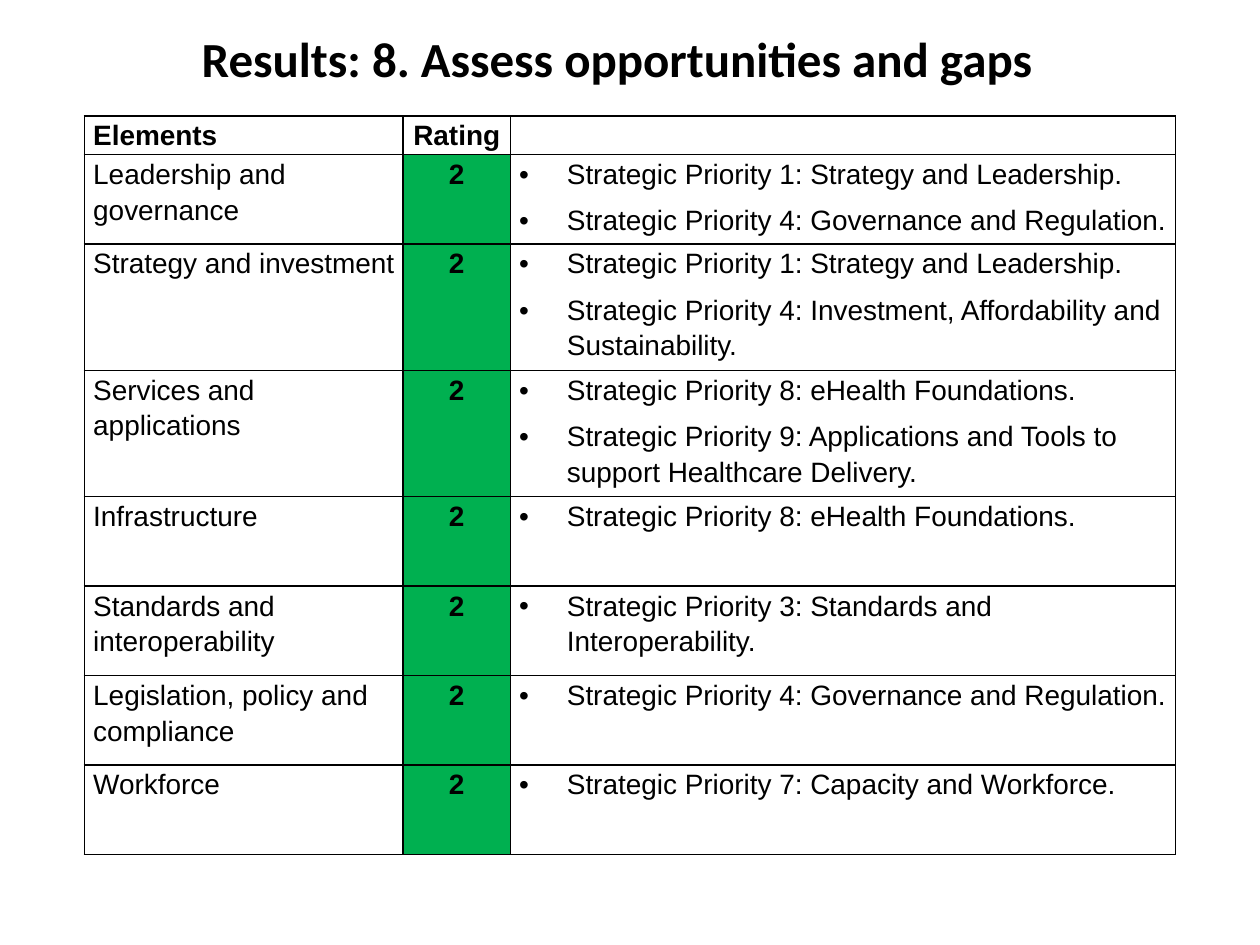
from lxml import etree
from pptx import Presentation
from pptx import util as u
from pptx.dml.color import RGBColor
from pptx.enum import text
from pptx.oxml.ns import qn

# Content
TITLE = "Results: 8. Assess opportunities and gaps "
HEADERS = ("Elements", "Rating", "")
ELEMENTS = [
    ("Leadership and governance", "2",
     ["Strategic Priority 1: Strategy and Leadership.",
      "Strategic Priority 4: Governance and Regulation."]),
    ("Strategy and investment", "2",
     ["Strategic Priority 1: Strategy and Leadership.",
      "Strategic Priority 4: Investment, Affordability and Sustainability."]),
    ("Services and applications", "2",
     ["Strategic Priority 8: eHealth Foundations.",
      "Strategic Priority 9: Applications and Tools to support Healthcare Delivery."]),
    ("Infrastructure", "2", ["Strategic Priority 8: eHealth Foundations."]),
    ("Standards and interoperability", "2",
     ["Strategic Priority 3: Standards and Interoperability."]),
    ("Legislation, policy and compliance", "2",
     ["Strategic Priority 4: Governance and Regulation."]),
    ("Workforce", "2", ["Strategic Priority 7: Capacity and Workforce."]),
]

# Layout in inches
COLUMNS = (2.53, 0.85, 5.28)
HEADER_ROW, SHORT_ROW, TALL_ROW = 0.29, 0.71, 1
TALL = {"Strategy and investment", "Services and applications"}
INDENT = 0.38
BLACK, GREEN = "000000", "00B050"


def color(value):
    return RGBColor.from_string(value)


def set_font(font, name, size, bold):
    font.name, font.size, font.bold = name, u.Pt(size), bold
    font.color.rgb = color(BLACK)


def add_bullet(paragraph):
    props = paragraph._p.get_or_add_pPr()
    props.set("marL", str(u.Inches(INDENT)))
    props.set("indent", str(-u.Inches(INDENT)))
    etree.SubElement(props, qn("a:buFont")).set("typeface", "Arial")
    etree.SubElement(props, qn("a:buChar")).set("char", "•")


def add_borders(cell):
    props = cell._tc.get_or_add_tcPr()
    for place, side in enumerate(("a:lnL", "a:lnR", "a:lnT", "a:lnB")):
        line = etree.Element(qn(side), w=str(u.Pt(1)))
        fill = etree.SubElement(line, qn("a:solidFill"))
        etree.SubElement(fill, qn("a:srgbClr")).set("val", BLACK)
        props.insert(place, line)


def fill_cell(cell, lines, bold=False, centred=False, bullets=False, fill=None):
    cell.margin_left = cell.margin_right = u.Inches(0.07)
    cell.margin_top = cell.margin_bottom = 0
    if fill:
        cell.fill.solid()
        cell.fill.fore_color.rgb = color(fill)
    else:
        cell.fill.background()
    add_borders(cell)
    frame = cell.text_frame
    for number, line in enumerate(lines):
        paragraph = frame.add_paragraph() if number else frame.paragraphs[0]
        if bullets:
            add_bullet(paragraph)
        paragraph.line_spacing = 1.15
        paragraph.space_before = u.Pt(3 if number else 0)
        paragraph.space_after = u.Pt(3)
        if centred:
            paragraph.alignment = text.PP_ALIGN.CENTER
        set_font(paragraph.font, "Arial", 16, bold)
        if line:
            paragraph.add_run().text = line
        else:  # keeps the empty header cell as low as its row
            etree.SubElement(paragraph._p, qn("a:endParaRPr")).set("sz", "1600")


deck = Presentation()
deck.slide_width, deck.slide_height = u.Inches(10), u.Inches(7.5)
slide = deck.slides.add_slide(deck.slide_layouts[6])

# Title
title = slide.shapes.add_textbox(0, u.Inches(0.01), u.Inches(9.88), u.Inches(0.9)).text_frame
title.word_wrap = True
title.vertical_anchor = text.MSO_ANCHOR.MIDDLE
heading = title.paragraphs[0]
heading.alignment = text.PP_ALIGN.CENTER
set_font(heading.font, "Calibri", 28, True)
heading.add_run().text = TITLE

# Ratings table
heights = [HEADER_ROW] + [TALL_ROW if name in TALL else SHORT_ROW
                          for name, _, _ in ELEMENTS]
ratings = slide.shapes.add_table(
    len(heights), len(COLUMNS), u.Inches(0.67), u.Inches(0.92),
    u.Inches(sum(COLUMNS)), u.Inches(sum(heights))).table
ratings.first_row = ratings.horz_banding = False
for column, width in zip(ratings.columns, COLUMNS):
    column.width = u.Inches(width)
for row, height in zip(ratings.rows, heights):
    row.height = u.Inches(height)

for index, header in enumerate(HEADERS):
    fill_cell(ratings.cell(0, index), [header], bold=True, centred=index == 1)
for index, (name, rating, priorities) in enumerate(ELEMENTS, 1):
    fill_cell(ratings.cell(index, 0), [name])
    fill_cell(ratings.cell(index, 1), [rating], bold=True, centred=True, fill=GREEN)
    fill_cell(ratings.cell(index, 2), priorities, bullets=True)

deck.save("out.pptx")
